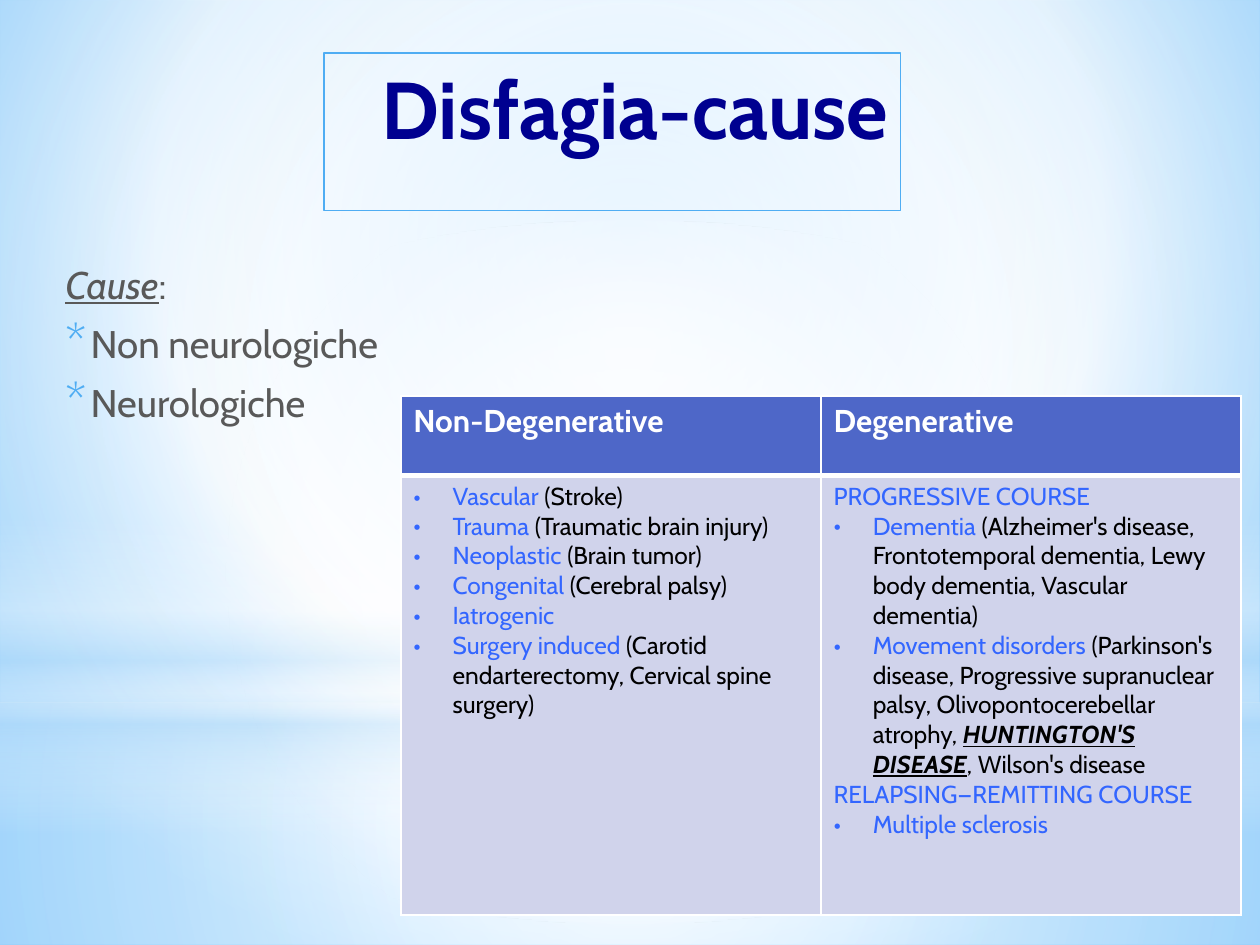
from lxml import etree
from pptx import Presentation, util as u
from pptx.dml.color import RGBColor
from pptx.enum import shapes, text
from pptx.oxml.ns import qn

NAVY = RGBColor(0x00, 0x00, 0x90)
GREY = RGBColor(0x59, 0x59, 0x59)
SKY = RGBColor(0x4F, 0xAD, 0xF3)
HEAD = RGBColor(0x4E, 0x67, 0xC8)
BODY = RGBColor(0xD0, 0xD3, 0xEB)
BLUE = RGBColor(0x33, 0x66, 0xFF)
WHITE = RGBColor(0xFF, 0xFF, 0xFF)
BLACK = RGBColor(0, 0, 0)
PALE = RGBColor(0xB4, 0xDC, 0xFA)
DAWN = RGBColor(0x9E, 0xD5, 0xFF)
DEEP = RGBColor(0x5B, 0xB9, 0xFF)
FONT = "Cabin"


def write(para, runs, size=14, indent=0, hang=0, bullet=None, tint=None, scale=100,
          before=0, after=0, align=None):
    para.alignment = align
    para.space_before, para.space_after = u.Pt(before), u.Pt(after)
    prop = para._p.get_or_add_pPr()
    prop.set("marL", str(u.Cm(indent)))
    prop.set("indent", str(-u.Cm(hang)))
    if bullet:
        if tint:
            color = etree.SubElement(prop, qn("a:buClr"))
            etree.SubElement(color, qn("a:srgbClr"), val=str(tint))
        etree.SubElement(prop, qn("a:buSzPct"), val=str(scale * 1000))
        etree.SubElement(prop, qn("a:buFont"), typeface=FONT)
        etree.SubElement(prop, qn("a:buChar"), char=bullet)
    for words, color, style in runs:
        run = para.add_run()
        run.text = words
        font = run.font
        font.name, font.size, font.color.rgb = FONT, u.Pt(size), color
        font.bold, font.italic, font.underline = "b" in style, "i" in style, "u" in style


def shade(fill, root, stops, rect=None):
    fill.gradient()
    grad = root.find(".//" + qn("a:gradFill"))
    for child in list(grad):
        grad.remove(child)
    items = etree.SubElement(grad, qn("a:gsLst"))
    for pos, color, alpha in stops:
        stop = etree.SubElement(items, qn("a:gs"), pos=str(pos * 1000))
        tone = etree.SubElement(stop, qn("a:srgbClr"), val=str(color))
        if alpha < 100:
            etree.SubElement(tone, qn("a:alpha"), val=str(alpha * 1000))
    if rect:
        way = etree.SubElement(grad, qn("a:path"), path="circle")
        sides = {side: str(val * 1000) for side, val in zip("ltrb", rect)}
        etree.SubElement(way, qn("a:fillToRect"), **sides)
    else:
        etree.SubElement(grad, qn("a:lin"), ang="5400000", scaled="0")


deck = Presentation()
deck.slide_width, deck.slide_height = u.Cm(25.4), u.Cm(19.05)
slide = deck.slides.add_slide(deck.slide_layouts[5])
shade(slide.background.fill, slide._element,
      [(0, DAWN, 100), (60, WHITE, 100), (100, DEEP, 100)], (20, 10, 20, 60))

RECT, OVAL = shapes.MSO_SHAPE.RECTANGLE, shapes.MSO_SHAPE.OVAL
MID = (50, 50, 50, 50)
layers = [
    (RECT, 14.17, 4.88, MID, [(0, WHITE, 91), (37, WHITE, 76), (100, PALE, 79)]),
    (RECT, 0, 14.17, MID, [(0, WHITE, 89), (48, WHITE, 62), (100, PALE, 79)]),
    (RECT, 10.46, 6.35, None, [(0, WHITE, 0), (29, WHITE, 30), (45, PALE, 40),
                               (55, WHITE, 26), (65, PALE, 60), (100, WHITE, 0)]),
    (OVAL, 4.45, 14.17, MID, [(0, WHITE, 100), (56, WHITE, 0)]),
]
for kind, top, high, rect, stops in layers:
    layer = slide.shapes.add_shape(kind, 0, u.Cm(top), deck.slide_width, u.Cm(high))
    layer.shadow.inherit = False
    layer.line.fill.background()
    shade(layer.fill, layer._element, stops, rect)

title = slide.shapes.title
slide.shapes._spTree.append(title._element)
title.left, title.top, title.width, title.height = map(u.Cm, (6.53, 1.07, 11.63, 3.18))
title.line.color.rgb, title.line.width = SKY, u.Pt(0.75)
frame = title.text_frame
frame.auto_size = text.MSO_AUTO_SIZE.NONE
frame.vertical_anchor = text.MSO_ANCHOR.TOP
write(frame.paragraphs[0], [("Disfagia-cause", NAVY, "b")], size=46,
      align=text.PP_ALIGN.RIGHT)

frame = slide.shapes.add_textbox(*map(u.Cm, (0.94, 5.13, 23.37, 13.41))).text_frame
frame.word_wrap = True
gaps = dict(size=22, before=4.4, after=3)
write(frame.paragraphs[0], [("Cause", GREY, "iu"), (":", GREY, "")], indent=0.13, **gaps)
for words in ("Non neurologiche", "Neurologiche"):
    write(frame.add_paragraph(), [(words, GREY, "")], indent=0.64, hang=0.51,
          bullet="*", tint=SKY, scale=130, **gaps)

table = slide.shapes.add_table(2, 2, *map(u.Cm, (8.08, 7.98, 16.94, 10.47))).table
for row, high in zip(table.rows, (1.6, 8.87)):
    row.height = u.Cm(high)
for col in table.columns:
    col.width = u.Cm(8.47)

causes = [
    [
        ("•", [("Vascular ", BLUE, ""), ("(Stroke)", BLACK, "")]),
        ("•", [("Trauma ", BLUE, ""), ("(Traumatic brain injury)", BLACK, "")]),
        ("•", [("Neoplastic ", BLUE, ""), ("(Brain tumor)", BLACK, "")]),
        ("•", [("Congenital ", BLUE, ""), ("(Cerebral palsy)", BLACK, "")]),
        ("•", [("Iatrogenic", BLUE, "")]),
        ("•", [("Surgery induced ", BLUE, ""),
               ("(Carotid endarterectomy, Cervical spine surgery)", BLACK, "")]),
    ],
    [
        (None, [("PROGRESSIVE COURSE", BLUE, "")]),
        ("•", [("Dementia", BLUE, ""),
               (" (Alzheimer's disease, Frontotemporal dementia, Lewy body dementia, "
                "Vascular dementia)", BLACK, "")]),
        ("•", [("Movement disorders ", BLUE, ""),
               ("(Parkinson's disease, Progressive supranuclear palsy, "
                "Olivopontocerebellar atrophy, ", BLACK, ""),
               ("HUNTINGTON'S DISEASE", BLACK, "biu"),
               (", Wilson's disease", BLACK, "")]),
        (None, [("RELAPSING—REMITTING COURSE", BLUE, "")]),
        ("•", [("Multiple sclerosis", BLUE, "")]),
    ],
]
for col, (name, lines) in enumerate(zip(("Non-Degenerative", "Degenerative"), causes)):
    head, cell = table.cell(0, col), table.cell(1, col)
    write(head.text_frame.paragraphs[0], [(name, WHITE, "b")], size=18)
    for i, (mark, runs) in enumerate(lines):
        para = cell.text_frame.add_paragraph() if i else cell.text_frame.paragraphs[0]
        inset = 0.79 if mark else 0
        write(para, runs, indent=inset, hang=inset, bullet=mark)
    for box, color, seam in ((head, HEAD, "lnB"), (cell, BODY, "lnT")):
        box.fill.solid()
        box.fill.fore_color.rgb = color
        prop = box._tc.get_or_add_tcPr()
        for i, side in enumerate(("lnL", "lnR", "lnT", "lnB")):
            edge = etree.Element(qn("a:" + side), w=str(u.Pt(3 if side == seam else 1)))
            solid = etree.SubElement(edge, qn("a:solidFill"))
            etree.SubElement(solid, qn("a:srgbClr"), val=str(WHITE))
            prop.insert(i, edge)

deck.save("out.pptx")
